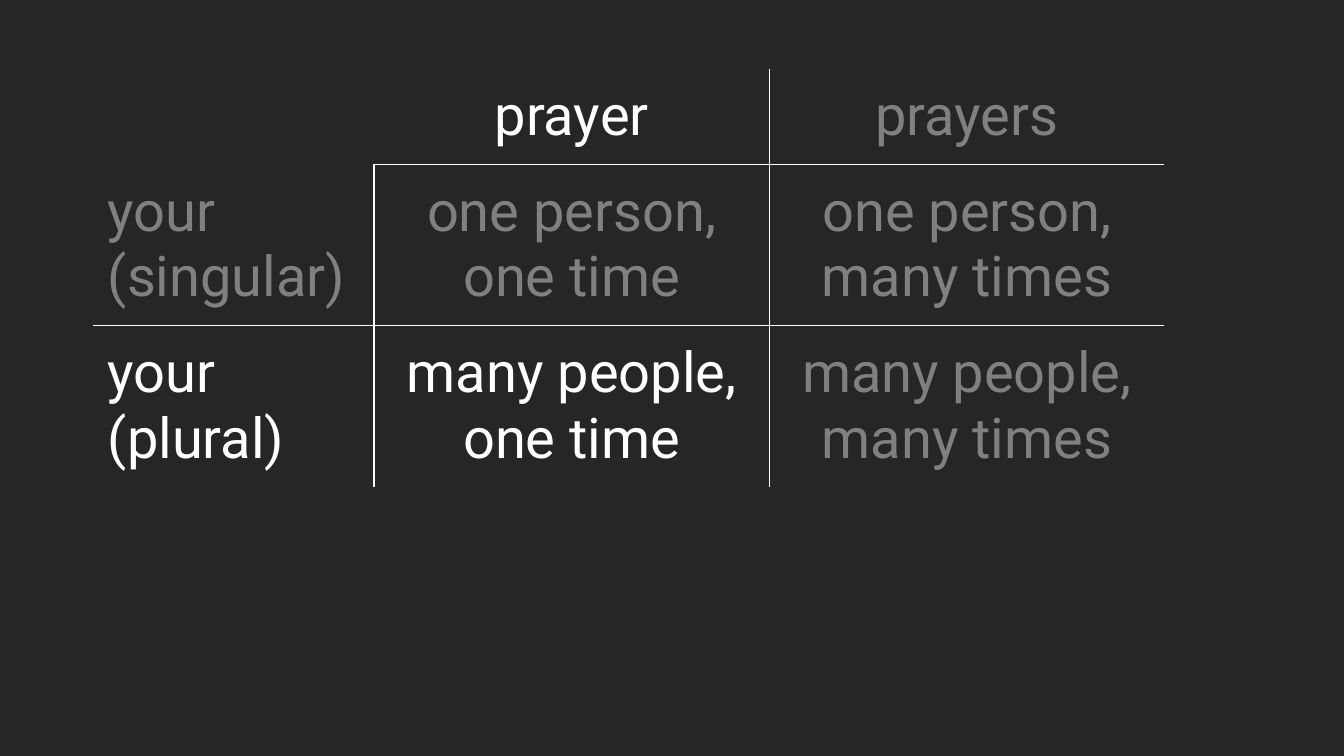
from dataclasses import dataclass

from lxml import etree
from pptx import Presentation
from pptx import util as u
from pptx.dml import color
from pptx.enum import text
from pptx.oxml import ns


@dataclass(frozen=True)
class Theme:
    background: str = "262626"
    bright: str = "FFFFFF"
    dim: str = "808080"
    font: str = "Roboto"
    size: int = 40
    border_width: int = 1
    cell_margin: float = 0.15
    plain_table: str = "{2D5ABB26-0587-4C30-8999-92F81FD0307C}"


class SlideBuilder:
    def __init__(self, slide, theme):
        self.slide = slide
        self.theme = theme

    def background(self):
        fill = self.slide.background.fill
        fill.solid()
        fill.fore_color.rgb = color.RGBColor.from_string(self.theme.background)

    def table(self, left, top, widths, heights, rows, highlighted):
        frame = self.slide.shapes.add_table(
            len(rows), len(widths), u.Inches(left), u.Inches(top),
            u.Inches(sum(widths)), u.Inches(sum(heights)))
        table = frame.table
        table.first_row = table.horz_banding = False
        table._tbl.tblPr.find(ns.qn("a:tableStyleId")).text = self.theme.plain_table
        for column, width in zip(table.columns, widths):
            column.width = u.Inches(width)
        for row, height in zip(table.rows, heights):
            row.height = u.Inches(height)
        for r, words in enumerate(rows):
            for c, wording in enumerate(words):
                cell = table.cell(r, c)
                shade = self.theme.bright if (r, c) in highlighted else self.theme.dim
                self.cell_text(cell, wording, shade, centred=c > 0)
                if (r, c) != (0, 0):
                    self.borders(cell, {
                        "L": c > 1 or (c == 1 and r > 0),
                        "R": c < len(widths) - 1,
                        "T": r > 1 or (r == 1 and c > 0),
                        "B": r < len(rows) - 1,
                    })

    def cell_text(self, cell, wording, shade, centred):
        cell.fill.background()
        for side in ("left", "right", "top", "bottom"):
            setattr(cell, f"margin_{side}", u.Inches(self.theme.cell_margin))
        para = cell.text_frame.paragraphs[0]
        para.text = wording
        para.alignment = text.PP_ALIGN.CENTER if centred else text.PP_ALIGN.LEFT
        font_format = {"name": self.theme.font, "size": u.Pt(self.theme.size)}
        for span in para.runs:
            for name, value in font_format.items():
                setattr(span.font, name, value)
            span.font.color.rgb = color.RGBColor.from_string(shade)

    def borders(self, cell, edges):
        properties = cell._tc.get_or_add_tcPr()
        shown = [side for side, visible in edges.items() if visible]
        for position, side in enumerate(shown):
            line = etree.Element(ns.qn(f"a:ln{side}"),
                                 w=str(u.Pt(self.theme.border_width)))
            fill = etree.SubElement(line, ns.qn("a:solidFill"))
            etree.SubElement(fill, ns.qn("a:srgbClr"), val=self.theme.bright)
            properties.insert(position, line)


def main():
    deck = Presentation()
    deck.slide_width = u.Inches(13.33)
    deck.slide_height = u.Inches(7.5)
    builder = SlideBuilder(deck.slides.add_slide(deck.slide_layouts[6]), Theme())
    builder.background()
    builder.table(
        left=0.92, top=0.68,
        widths=[2.79, 3.92, 3.92], heights=[0.94, 1.6, 1.6],
        rows=[
            ["", "prayer", "prayers"],
            ["your\n(singular)", "one person,\none time", "one person,\nmany times"],
            ["your\n(plural)", "many people,\none time", "many people,\nmany times"],
        ],
        highlighted={(0, 1), (2, 0), (2, 1)})
    deck.save("out.pptx")


if __name__ == "__main__":
    main()
